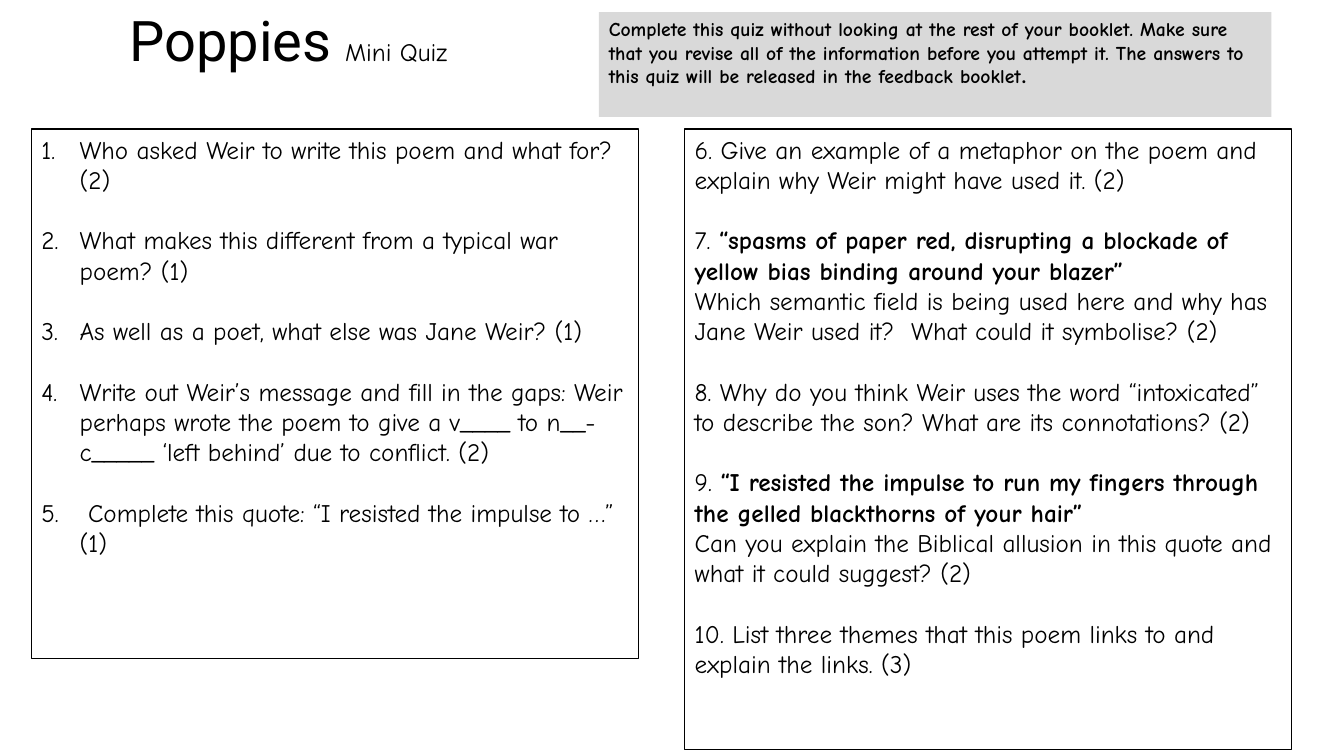
from pptx import Presentation
from pptx.dml.color import RGBColor as RGB
from pptx.enum.shapes import MSO_SHAPE as Kind
from pptx.enum.text import MSO_ANCHOR as Anchor, MSO_AUTO_SIZE as Fit, PP_ALIGN as Align
from pptx.oxml.xmlchemy import OxmlElement as Node
from pptx.util import Inches, Pt

SANS, HAND = "Roboto", "Comic Neue"
GAP = 21.6  # one text line between questions


def place(shape, left, top, width, height):
    spots = dict(left=left, top=top, width=width, height=height)
    for key, val in spots.items():
        setattr(shape, key, Inches(val))
    frame = shape.text_frame
    form = dict(word_wrap=True, auto_size=Fit.NONE, vertical_anchor=Anchor.TOP)
    for key, val in form.items():
        setattr(frame, key, val)
    return frame


def write(para, text, size, name=HAND, bold=False):
    run = para.add_run()
    run.text = text
    form = dict(size=Pt(size), name=name, bold=bold)
    for key, val in form.items():
        setattr(run.font, key, val)
    run.font.color.rgb = RGB.from_string("000000")


deck = Presentation()
deck.slide_width, deck.slide_height = Inches(13.33), Inches(7.5)
slide = deck.slides.add_slide(deck.slide_layouts[3])
title, left, right = slide.placeholders

# Title
head = place(title, 0.31, 0, 5.1, 0.77).paragraphs[0]
head.alignment = Align.CENTER
write(head, "Poppies ", 40, SANS)
write(head, "Mini Quiz", 18)

# Grey note
note = slide.shapes.add_shape(Kind.RECTANGLE, 0, 0, 0, 0)
note.shadow.inherit = False
note.fill.solid()
note.fill.fore_color.rgb = RGB.from_string("D9D9D9")
note.line.fill.background()
para = place(note, 5.94, 0.12, 6.67, 1.04).paragraphs[0]
para.alignment = Align.LEFT
write(para, "Complete this quiz without looking at the rest of your booklet. "
      "Make sure that you revise all of the information before you attempt it. "
      "The answers to this quiz will be released in the feedback booklet", 14, bold=True)
write(para, ".", 14, "Calibri", True)

# Questions: each is a list of paragraphs, each paragraph a list of runs;
# runs that open with a quotation mark are bold
first = [
    [["Who asked Weir to write this poem and what for? (2)"]],
    [["What makes this different from a typical war poem? (1)"]],
    [["As well as a poet, what else was Jane Weir? (1)"]],
    [["Write out Weir’s message and fill in the gaps: Weir perhaps wrote the poem "
      "to give a v____ to n__-c_____ ‘left behind’ due to conflict. (2)"]],
    [[" Complete this quote: “I resisted the impulse to …” (1)"]],
]
second = [
    [["6. Give an example of a metaphor on the poem and explain why Weir might have used it. (2)"]],
    [["7. ", "“spasms of paper red, disrupting a blockade of yellow bias binding "
      "around your blazer”"],
     ["Which semantic field is being used here and why has Jane Weir used it?  "
      "What could it symbolise? (2)"]],
    [["8. Why do you think Weir uses the word “intoxicated” to describe the son? "
      "What are its connotations? (2)"]],
    [["9. ", "“I resisted the impulse to run my fingers through the gelled "
      "blackthorns of your hair”"],
     ["Can you explain the Biblical allusion in this quote and what it could suggest? (2)"]],
    [["10. List three themes that this poem links to and explain the links. (3)"]],
]

# Question boxes
for box, x, high, asks, auto in [(left, 0.31, 5.25, first, True),
                                 (right, 6.79, 6.16, second, False)]:
    frame = place(box, x, 1.28, 6.02, high)
    box.line.color.rgb = RGB.from_string("000000")
    box.line.width = Pt(0.75)
    para = frame.paragraphs[0]
    for i, ask in enumerate(asks):
        for j, runs in enumerate(ask):
            if i or j:
                para = frame.add_paragraph()
            props = para._p.get_or_add_pPr()
            dent = Inches(0.38) if auto else 0
            props.set("marL", str(dent))
            props.set("indent", str(-dent))
            mark = Node("a:buAutoNum" if auto else "a:buNone")
            if auto:
                mark.set("type", "arabicPeriod")
            props.append(mark)
            para.space_before = Pt(GAP if i and not j else 0)
            for text in runs:
                write(para, text, 18, bold=text.startswith("“"))

deck.save("out.pptx")
